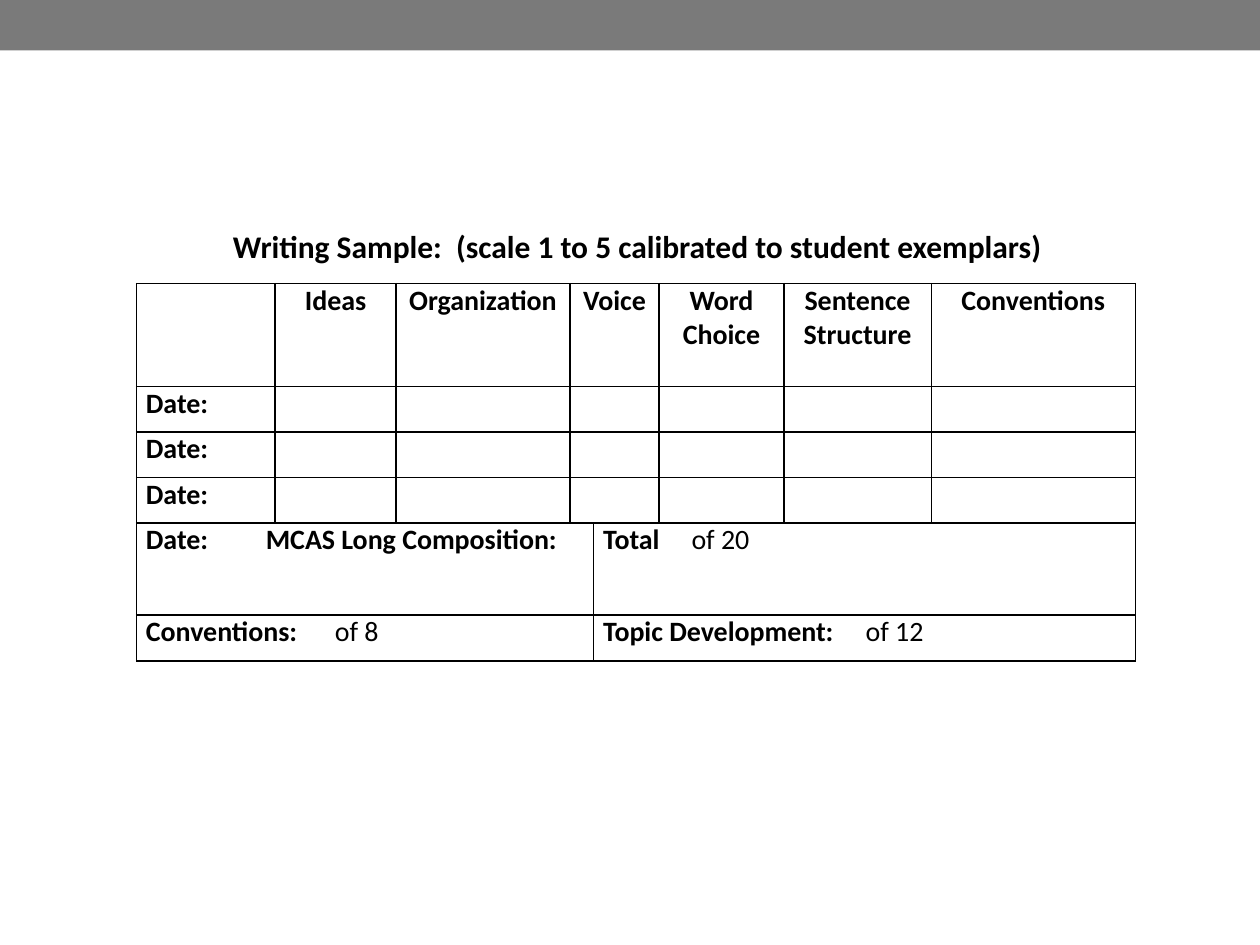
from dataclasses import dataclass

from lxml.etree import SubElement
from pptx import Presentation
from pptx.dml.color import RGBColor
from pptx.enum.shapes import MSO_SHAPE
from pptx.enum.text import PP_ALIGN
from pptx.oxml.ns import qn
from pptx.util import Pt


@dataclass(frozen=True)
class Theme:
    ink: str = "000000"
    band: str = "7A7A7A"
    font: str = "Calibri"
    title: int = 18
    body: int = 16
    line: int = 1


THEME = Theme()

COLS = [79.2, 69.1, 99.4, 12.2, 37.4, 71.3, 84.2, 116.6]
ROWS = [59, 26, 26, 26, 52.6, 26.2]
HEADS = {1: "Ideas", 2: "Organization", 3: "Voice", 5: "Word Choice",
         6: "Sentence Structure", 7: "Conventions"}
# Row, column, bold label, plain tail, tab stop
SCORES = [
    (4, 0, "Date:\tMCAS Long Composition:", "", 68.5),
    (4, 4, "Total", "\tof 20", 50.5),
    (5, 0, "Conventions:", "\tof 8", 108),
    (5, 4, "Topic Development:", "\tof 12", 150),
]


def style(run, size, bold=True):
    font = run.font
    font.name, font.size, font.bold = THEME.font, Pt(size), bold
    font.color.rgb = RGBColor.from_string(THEME.ink)


def add_band(slide, width):
    band = slide.shapes.add_shape(MSO_SHAPE.RECTANGLE, 0, 0, width, Pt(28.8))
    band.shadow.inherit = False
    band.fill.solid()
    band.fill.fore_color.rgb = RGBColor.from_string(THEME.band)
    band.line.fill.background()


def add_title(slide, text):
    box = slide.shapes.add_textbox(Pt(126), Pt(126), Pt(522.7), Pt(28.8))
    frame = box.text_frame
    frame.word_wrap = True
    frame.text = text
    style(frame.paragraphs[0].runs[0], THEME.title)


def frame_cell(cell):
    """Draw all four borders and clear the fill."""
    cell.margin_left = cell.margin_right = Pt(5.4)
    cell.margin_top = cell.margin_bottom = 0
    props = cell._tc.get_or_add_tcPr()
    for side in "LRTB":
        line = SubElement(props, qn(f"a:ln{side}"), w=str(Pt(THEME.line)))
        fill = SubElement(line, qn("a:solidFill"))
        SubElement(fill, qn("a:srgbClr"), val=THEME.ink)
    cell.fill.background()


def write(cell, label, tail="", align=PP_ALIGN.LEFT, stop=None):
    para = cell.text_frame.paragraphs[0]
    para.text = label
    para.alignment = align
    style(para.runs[0], THEME.body)
    if tail:
        run = para.add_run()
        run.text = tail
        style(run, THEME.body, bold=False)
    if stop:
        tabs = SubElement(para._p.get_or_add_pPr(), qn("a:tabLst"))
        SubElement(tabs, qn("a:tab"), pos=str(Pt(stop)), algn="l")


def add_grid(slide):
    shape = slide.shapes.add_table(len(ROWS), len(COLS), Pt(78), Pt(162),
                                   Pt(sum(COLS)), Pt(sum(ROWS)))
    table = shape.table
    table.first_row = table.horz_banding = False
    for col, width in zip(table.columns, COLS):
        col.width = Pt(width)
    for row, height in zip(table.rows, ROWS):
        row.height = Pt(height)
    for cell in table.iter_cells():
        frame_cell(cell)

    # Sample rows: Voice covers two columns
    for row in range(4):
        table.cell(row, 3).merge(table.cell(row, 4))
    for col, head in HEADS.items():
        write(table.cell(0, col), head, align=PP_ALIGN.CENTER)
    for row in range(1, 4):
        write(table.cell(row, 0), "Date:")

    # Score rows: two halves of four columns
    for row, col, label, tail, stop in SCORES:
        cell = table.cell(row, col)
        cell.merge(table.cell(row, col + 3))
        write(cell, label, tail, stop=stop)


def main():
    deck = Presentation()
    deck.slide_width, deck.slide_height = Pt(720), Pt(540)
    slide = deck.slides.add_slide(deck.slide_layouts[6])
    add_band(slide, deck.slide_width)
    add_grid(slide)
    add_title(slide, "Writing Sample:  (scale 1 to 5 calibrated to student exemplars)")
    deck.save("out.pptx")


if __name__ == "__main__":
    main()
